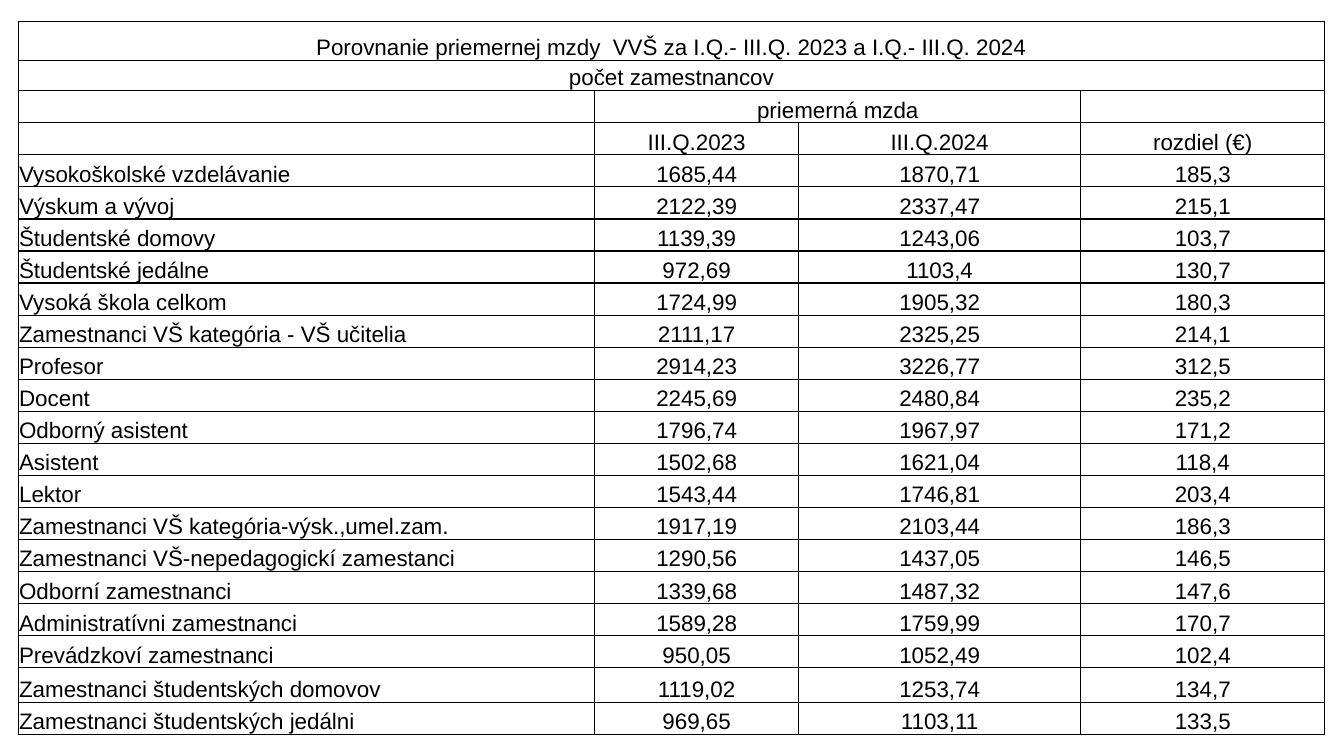
"""Build a slide with a table comparing average wages in 2023 and 2024."""
from lxml import etree
from pptx import Presentation
from pptx.dml.color import RGBColor
from pptx.enum.text import MSO_ANCHOR, PP_ALIGN
from pptx.oxml.ns import qn
from pptx.util import Inches, Pt

BLACK = RGBColor(0x00, 0x00, 0x00)
LEFT, CENTER = PP_ALIGN.LEFT, PP_ALIGN.CENTER
BOTTOM = MSO_ANCHOR.BOTTOM

COLUMN_WIDTHS = [5.72, 2.02, 2.8, 2.42]
TABLE_HEIGHT = 7.08
SPECIAL_HEIGHTS = {0: 0.39, 1: 0.3, 20: 0.34}
HEADER_ROWS = 4
MERGES = [(0, 0, 3), (1, 0, 3), (2, 1, 2)]
ROWS = [
    ("Porovnanie priemernej mzdy  VVŠ za I.Q.- III.Q. 2023 a I.Q.- III.Q. 2024", "", "", ""),
    ("počet zamestnancov", "", "", ""),
    ("", "priemerná mzda", "", ""),
    ("", "III.Q.2023", "III.Q.2024", "rozdiel (€)"),
    ("Vysokoškolské vzdelávanie", "1685,44", "1870,71", "185,3"),
    ("Výskum a vývoj", "2122,39", "2337,47", "215,1"),
    ("Študentské domovy", "1139,39", "1243,06", "103,7"),
    ("Študentské jedálne", "972,69", "1103,4", "130,7"),
    ("Vysoká škola celkom", "1724,99", "1905,32", "180,3"),
    ("Zamestnanci VŠ kategória - VŠ učitelia", "2111,17", "2325,25", "214,1"),
    ("Profesor", "2914,23", "3226,77", "312,5"),
    ("Docent", "2245,69", "2480,84", "235,2"),
    ("Odborný asistent", "1796,74", "1967,97", "171,2"),
    ("Asistent", "1502,68", "1621,04", "118,4"),
    ("Lektor", "1543,44", "1746,81", "203,4"),
    ("Zamestnanci VŠ kategória-výsk.,umel.zam.", "1917,19", "2103,44", "186,3"),
    ("Zamestnanci VŠ-nepedagogickí zamestanci", "1290,56", "1437,05", "146,5"),
    ("Odborní zamestnanci", "1339,68", "1487,32", "147,6"),
    ("Administratívni zamestnanci", "1589,28", "1759,99", "170,7"),
    ("Prevádzkoví zamestnanci", "950,05", "1052,49", "102,4"),
    ("Zamestnanci študentských domovov", "1119,02", "1253,74", "134,7"),
    ("Zamestnanci študentských jedálni", "969,65", "1103,11", "133,5"),
]


def write_text(cell, text, *, size=16, font="Arial", color=BLACK, align=CENTER):
    paragraph = cell.text_frame.paragraphs[0]
    paragraph.alignment = align
    run = paragraph.add_run()
    run.text = text
    run.font.size = Pt(size)
    run.font.name = font
    run.font.color.rgb = color


def add_borders(cell, *, width=1, color=BLACK):
    properties = cell._tc.get_or_add_tcPr()
    for side in ("a:lnL", "a:lnR", "a:lnT", "a:lnB"):
        line = etree.SubElement(properties, qn(side), w=str(Pt(width)))
        fill = etree.SubElement(line, qn("a:solidFill"))
        etree.SubElement(fill, qn("a:srgbClr"), val=str(color))


presentation = Presentation()
presentation.slide_width = Inches(13.33)
presentation.slide_height = Inches(7.5)
slide = presentation.slides.add_slide(presentation.slide_layouts[6])

table = slide.shapes.add_table(
    len(ROWS), len(COLUMN_WIDTHS), Inches(0.18), Inches(0.21),
    Inches(sum(COLUMN_WIDTHS)), Inches(TABLE_HEIGHT),
).table
table.first_row = False
table.horz_banding = False

for column, width in zip(table.columns, COLUMN_WIDTHS):
    column.width = Inches(width)

regular_count = len(ROWS) - len(SPECIAL_HEIGHTS)
regular_height = (TABLE_HEIGHT - sum(SPECIAL_HEIGHTS.values())) / regular_count
for row_index, row in enumerate(table.rows):
    row.height = Inches(SPECIAL_HEIGHTS.get(row_index, regular_height))

for row_index, first, last in MERGES:
    table.cell(row_index, first).merge(table.cell(row_index, last))

for row_index, texts in enumerate(ROWS):
    for column_index, text in enumerate(texts):
        cell = table.cell(row_index, column_index)
        cell.vertical_anchor = BOTTOM
        cell.margin_left = cell.margin_right = cell.margin_top = Inches(0.01)
        cell.margin_bottom = 0
        add_borders(cell)
        cell.fill.background()
        if text:
            is_label = column_index == 0 and row_index >= HEADER_ROWS
            write_text(cell, text, align=LEFT if is_label else CENTER)

presentation.save("out.pptx")
